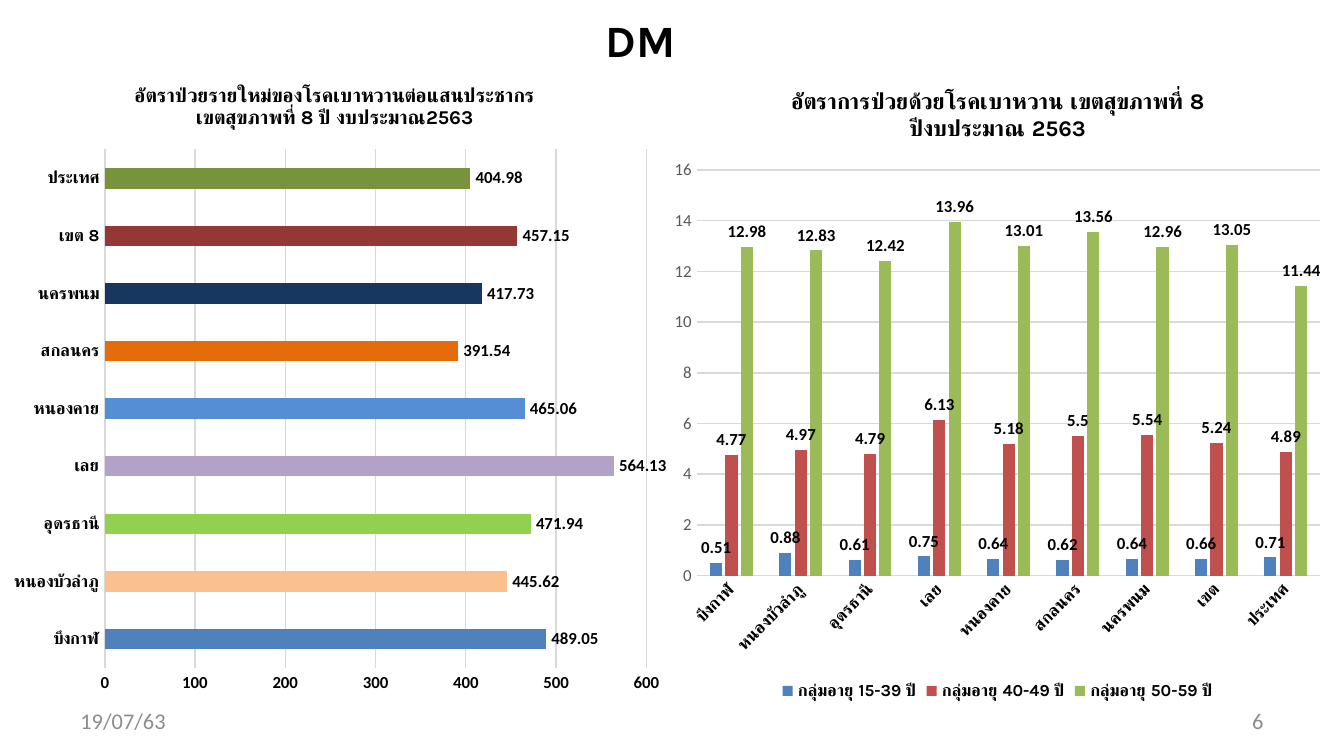
"""Build the DM slide: two charts of diabetes rates, with title, date and number."""
from lxml import etree
from pptx import Presentation, util as u
from pptx.chart import data as cd
from pptx.dml.color import RGBColor
from pptx.enum import chart as ce, text as te
from pptx.oxml.ns import qn

WIDE = u.Inches(10)
HIGH = WIDE * 9 // 16
BLACK = RGBColor(0, 0, 0)
GRAY = RGBColor(0x8C, 0x8C, 0x8C)
DARK = RGBColor(0x59, 0x59, 0x59)
RULE = RGBColor(0xD9, 0xD9, 0xD9)
BLUE = RGBColor(0x4F, 0x81, 0xBD)
RED = RGBColor(0xC0, 0x50, 0x4D)
GREEN = RGBColor(0x9B, 0xBB, 0x59)
PEACH = RGBColor(0xFA, 0xC0, 0x90)
LIME = RGBColor(0x92, 0xD0, 0x50)
LILAC = RGBColor(0xB3, 0xA2, 0xC7)
SKY = RGBColor(0x55, 0x8E, 0xD5)
ORANGE = RGBColor(0xE4, 0x6C, 0x0A)
NAVY = RGBColor(0x17, 0x37, 0x5E)
MAROON = RGBColor(0x95, 0x37, 0x35)
OLIVE = RGBColor(0x77, 0x93, 0x3C)

HEAD = {"name": "Karla", "size": u.Pt(24), "bold": True}
FOOT = {"name": "Calibri", "size": u.Pt(12), "bold": False}
BASE = {"name": "Calibri", "size": u.Pt(10)}
NAME = {"name": "Karla", "size": u.Pt(9), "bold": True}
VALUE = {"name": "Calibri", "size": u.Pt(9), "bold": True}
PLAIN = VALUE | {"bold": False}

TOWNS = ["บึงกาฬ", "หนองบัวลำภู", "อุดรธานี", "เลย", "หนองคาย", "สกลนคร", "นครพนม"]
NEW = {
    "kind": ce.XL_CHART_TYPE.BAR_CLUSTERED,
    "title": "อัตราป่วยรายใหม่ของโรคเบาหวานต่อแสนประชากร\nเขตสุขภาพที่ 8 ปี งบประมาณ2563",
    "size": 10.5, "spot": (19.4, 3.1), "plot": (15.6, 13.8, 80.6, 80.3),
    "cats": TOWNS + ["เขต 8", "ประเทศ"], "gap": 182, "lap": 0,
    "top": 600, "step": 100, "ticks": VALUE, "ink": BLACK,
    "rows": [("Series 1", BLUE,
              [489.05, 445.62, 471.94, 564.13, 465.06, 391.54, 417.73, 457.15, 404.98])],
    "hues": [BLUE, PEACH, LIME, LILAC, SKY, ORANGE, NAVY, MAROON, OLIVE],
}
AGES = {
    "kind": ce.XL_CHART_TYPE.COLUMN_CLUSTERED,
    "title": "อัตราการป่วยด้วยโรคเบาหวาน เขตสุขภาพที่ 8\nปีงบประมาณ 2563",
    "size": 12, "spot": (18.7, 3.3), "plot": (5.3, 17, 92.8, 62.8),
    "cats": TOWNS + ["เขต", "ประเทศ"], "gap": 219, "lap": -27,
    "top": 16, "step": 2, "ticks": PLAIN, "ink": DARK,
    "rows": [
        ("กลุ่มอายุ 15-39 ปี", BLUE, [0.51, 0.88, 0.61, 0.75, 0.64, 0.62, 0.64, 0.66, 0.71]),
        ("กลุ่มอายุ 40-49 ปี", RED, [4.77, 4.97, 4.79, 6.13, 5.18, 5.5, 5.54, 5.24, 4.89]),
        ("กลุ่มอายุ 50-59 ปี", GREEN,
         [12.98, 12.83, 12.42, 13.96, 13.01, 13.56, 12.96, 13.05, 11.44]),
    ],
    "hues": [],
}


def area(x, y, w, h):
    """Turn percent shares of the slide into lengths."""
    return tuple(int(part * full / 100)
                 for part, full in zip((x, y, w, h), (WIDE, HIGH) * 2))


def assign(item, form):
    """Set each attribute in a dict of format values."""
    for key, val in form.items():
        setattr(item, key, val)


def style(font, form, ink=BLACK):
    """Format a font and colour it."""
    assign(font, form)
    font.color.rgb = ink


def write(shape, words, form, ink, align):
    """Fill a text shape with one aligned line."""
    frame = shape.text_frame
    assign(frame, {"word_wrap": True, "vertical_anchor": te.MSO_ANCHOR.MIDDLE,
                   "auto_size": te.MSO_AUTO_SIZE.NONE})
    frame.text = words
    line = frame.paragraphs[0]
    line.alignment = align
    style(line.runs[0].font, form, ink)


def header(slide, box):
    """Place the slide title."""
    head = slide.shapes.title
    assign(head, dict(zip(("left", "top", "width", "height"), box)))
    write(head, "DM", HEAD, BLACK, te.PP_ALIGN.CENTER)


def footer(slide, box):
    """Place the date and the slide number at the two ends of a band."""
    left, top, width, height = box
    part = int(width * 0.26)
    ends = [(left, "19/07/63", te.PP_ALIGN.LEFT),
            (left + width - part, "6", te.PP_ALIGN.RIGHT)]
    for x, words, align in ends:
        note = slide.shapes.add_textbox(x, top, part, height)
        write(note, words, FOOT, GRAY, align)


def locate(node, shares, inner=False):
    """Give a chart part a fixed place in percent shares of the chart."""
    lay = node.find(qn("c:layout"))
    if lay is None:
        lay = etree.Element(qn("c:layout"))
        node.insert(0, lay)
    spot = etree.SubElement(lay, qn("c:manualLayout"))
    pairs = [("layoutTarget", "inner")] if inner else []
    pairs += [("xMode", "edge"), ("yMode", "edge")]
    pairs += [(tag, share / 100) for tag, share in zip("xywh", shares)]
    for tag, val in pairs:
        etree.SubElement(spot, qn("c:" + tag)).set("val", str(val))


def caption(chart, info):
    """Write and place the chart title."""
    frame = chart.chart_title.text_frame
    frame.text = info["title"]
    for line in frame.paragraphs:
        style(line.runs[0].font, NAME | {"size": u.Pt(info["size"])})
    locate(chart.chart_title.element, info["spot"])


def scale(chart, info):
    """Format both axes and the grid."""
    cat, val = chart.category_axis, chart.value_axis
    assign(val, {"minimum_scale": 0, "maximum_scale": info["top"],
                 "major_unit": info["step"], "has_major_gridlines": True})
    for axis, form, ink in [(cat, NAME, BLACK), (val, info["ticks"], info["ink"])]:
        axis.major_tick_mark = axis.minor_tick_mark = ce.XL_TICK_MARK.NONE
        style(axis.tick_labels.font, form, ink)
    for line in (cat.format.line, val.major_gridlines.format.line):
        line.color.rgb = RULE
        line.width = u.Pt(0.75)
    val.format.line.fill.background()


def bars(plot, info):
    """Colour the bars and label them with their values."""
    assign(plot, {"gap_width": info["gap"], "overlap": info["lap"],
                  "vary_by_categories": False})
    for row, (_, ink, _) in zip(plot.series, info["rows"]):
        row.format.fill.solid()
        row.format.fill.fore_color.rgb = ink
        row.invert_if_negative = False
        tags = row.data_labels
        assign(tags, {"show_value": True, "position": ce.XL_LABEL_POSITION.OUTSIDE_END})
        style(tags.font, VALUE)
        for spot, hue in enumerate(info["hues"]):
            fill = row.points[spot].format.fill
            fill.solid()
            fill.fore_color.rgb = hue


def graph(slide, box, info):
    """Add one chart in its box."""
    data = cd.CategoryChartData()
    data.categories = info["cats"]
    for name, _, vals in info["rows"]:
        data.add_series(name, vals)
    chart = slide.shapes.add_chart(info["kind"], *box, data).chart
    style(chart.font, BASE)
    caption(chart, info)
    scale(chart, info)
    bars(chart.plots[0], info)
    locate(chart.element.find(".//" + qn("c:plotArea")), info["plot"], True)
    chart.has_legend = len(info["rows"]) > 1
    if chart.has_legend:
        assign(chart.legend, {"position": ce.XL_LEGEND_POSITION.BOTTOM,
                              "include_in_layout": False})
        style(chart.legend.font, NAME)
        route = "/".join(map(qn, ("c:catAx", "c:txPr", "a:bodyPr")))
        chart.element.find(".//" + route).set("rot", "-2700000")


def main():
    """Build and save the slide."""
    deck = Presentation()
    assign(deck, {"slide_width": WIDE, "slide_height": HIGH})
    slide = deck.slides.add_slide(deck.slide_layouts[5])
    footer(slide, area(5, 92.7, 90, 5.3))
    for x, info in [(0, NEW), (49.2, AGES)]:
        graph(slide, area(x, 8, 50, 85.4), info)
    header(slide, area(36, 2, 23.3, 6.6))
    deck.save("out.pptx")


if __name__ == "__main__":
    main()
